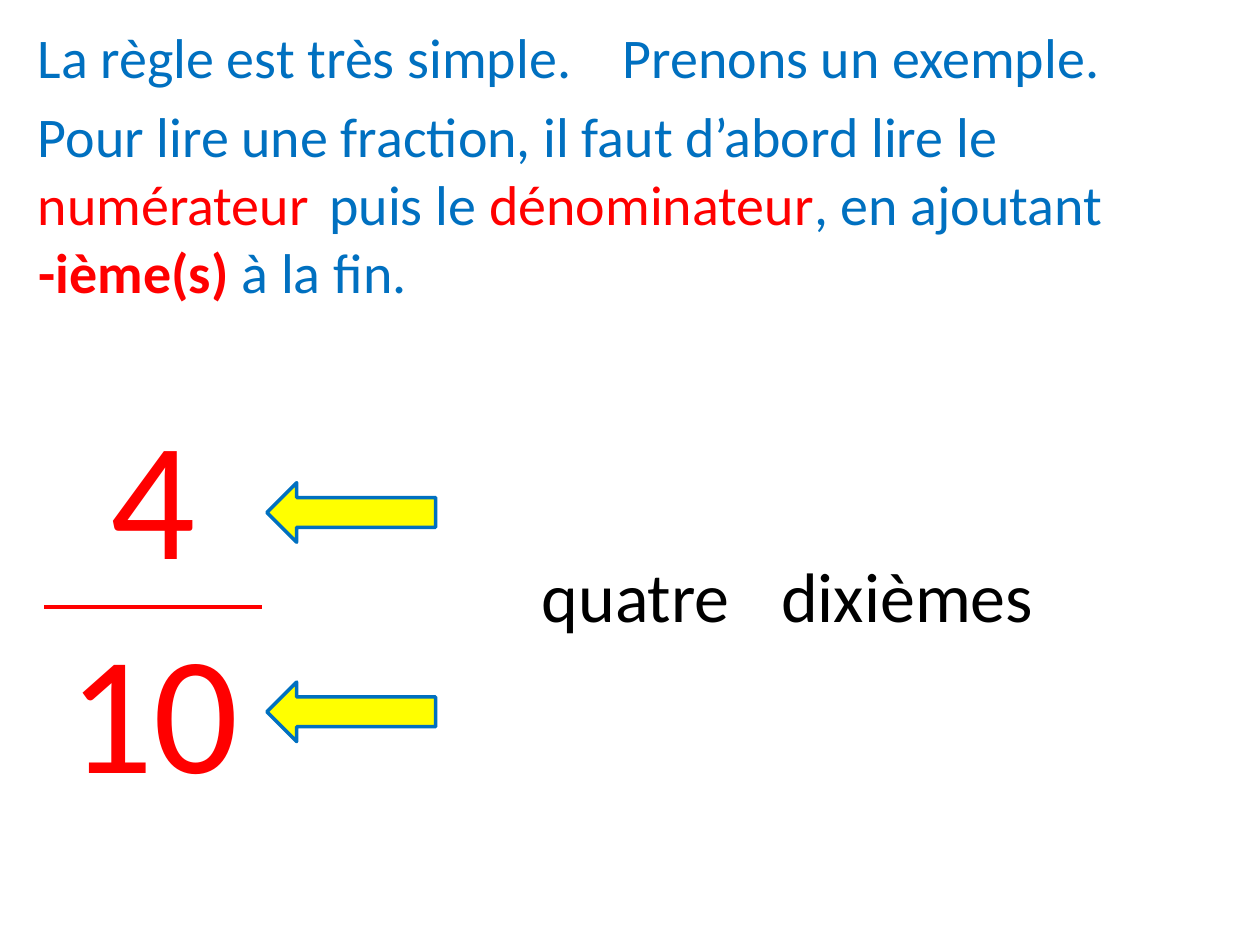
from lxml import etree
from pptx import Presentation
from pptx.dml.color import RGBColor
from pptx.enum.shapes import MSO_SHAPE
from pptx.enum.text import MSO_AUTO_SIZE, PP_ALIGN
from pptx.oxml.ns import qn
from pptx.util import Cm, Pt

ARROW = MSO_SHAPE.RIGHT_ARROW
GROW = MSO_AUTO_SIZE.SHAPE_TO_FIT_TEXT
LEFT, CENTER = PP_ALIGN.LEFT, PP_ALIGN.CENTER
BLUE, RED, YELLOW, BLACK = "0070C0", "FF0000", "FFFF00", "000000"
PLAIN = "{2D5ABB26-0587-4C30-8999-92F81FD0307C}"


def rgb(code):
    return RGBColor.from_string(code)


def write(frame, *lines, size=32, color=BLUE, align=LEFT, indent=0):
    """Each line is a list of (text, format) runs; indent shifts the first line."""
    for i, line in enumerate(lines):
        para = frame.paragraphs[0] if i == 0 else frame.add_paragraph()
        para.alignment = align
        if indent and i == 0:
            props = para._p.get_or_add_pPr()
            props.set("marL", "0")
            props.set("indent", str(Cm(indent)))
        for text, form in line:
            run = para.add_run()
            run.text = text
            run.font.name = "Calibri"
            run.font.size = Pt(size)
            run.font.bold = form.get("bold", False)
            run.font.color.rgb = rgb(form.get("color", color))


def add_text(slide, left, top, width, height, *lines, **form):
    box = slide.shapes.add_textbox(Cm(left), Cm(top), Cm(width), Cm(height))
    box.text_frame.word_wrap = True
    box.text_frame.auto_size = GROW
    write(box.text_frame, *lines, **form)


def add_arrow(slide, left, top):
    arrow = slide.shapes.add_shape(ARROW, Cm(left), Cm(top), Cm(3.4), Cm(1.2))
    arrow.rotation = 180
    arrow.shadow.inherit = False
    arrow.fill.solid()
    arrow.fill.fore_color.rgb = rgb(YELLOW)
    arrow.line.color.rgb = rgb(BLUE)
    arrow.line.width = Pt(2)


def add_edge(cell, tag, color, width):
    props = cell._tc.get_or_add_tcPr()
    edge = etree.SubElement(props, qn(tag), w=str(Pt(width)))
    fill = etree.SubElement(edge, qn("a:solidFill"))
    etree.SubElement(fill, qn("a:srgbClr"), val=color)


def add_ratio(slide, left, top, width, height, parts):
    frame = slide.shapes.add_table(2, 1, Cm(left), Cm(top), Cm(width), Cm(height))
    table = frame.table
    table.first_row = table.horz_banding = False
    frame._element.find(".//" + qn("a:tableStyleId")).text = PLAIN
    for row, (text, tag) in enumerate(zip(parts, ("a:lnB", "a:lnT"))):
        cell = table.cell(row, 0)
        write(cell.text_frame, [(text, {})], size=96, color=RED, align=CENTER)
        add_edge(cell, tag, RED, 2.25)
        cell.fill.background()


def main():
    deck = Presentation()
    deck.slide_width, deck.slide_height = Cm(25.4), Cm(19.05)
    slide = deck.slides.add_slide(deck.slide_layouts[6])

    # Opening sentences
    add_text(slide, 0.51, 0.33, 11.8, 1.62, [("La règle est très simple.", {})])
    add_text(slide, 12.3, 0.33, 10.8, 1.62, [("Prenons un exemple.", {})])

    # Rule for reading a fraction
    add_text(slide, 0.51, 1.93, 24, 3,
             [("Pour lire une fraction, il faut d’abord lire le ", {}),
              ("numérateur", {"color": RED})])
    add_text(slide, 0.53, 3.3, 24, 3,
             [("puis le ", {}), ("dénominateur", {"color": RED}),
              (", en ajoutant", {})],
             [("-ième(s)", {"color": RED, "bold": True}), (" à la fin.", {})],
             indent=5.86)

    # Fraction with its arrows
    add_ratio(slide, 0.89, 7.92, 4.4, 8.64, ("4", "10"))
    for top in (9.73, 13.75):
        add_arrow(slide, 5.38, top)

    # Fraction in words
    for left, width, word in ((10.67, 4.83, "quatre"), (15.5, 6.2, "dixièmes")):
        add_text(slide, left, 11.02, width, 1.96, [(word, {})],
                 size=40, color=BLACK)

    deck.save("out.pptx")


if __name__ == "__main__":
    main()
